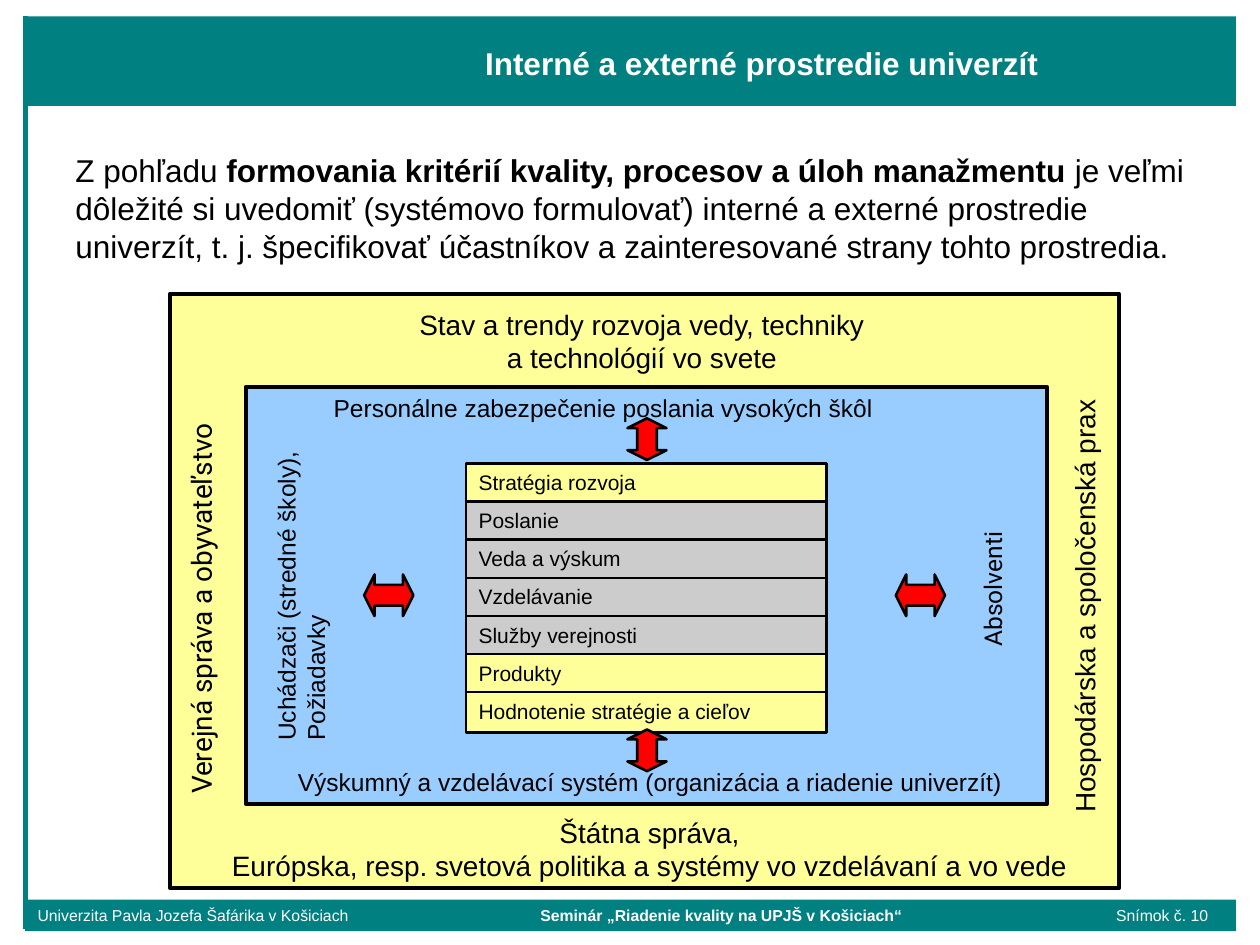
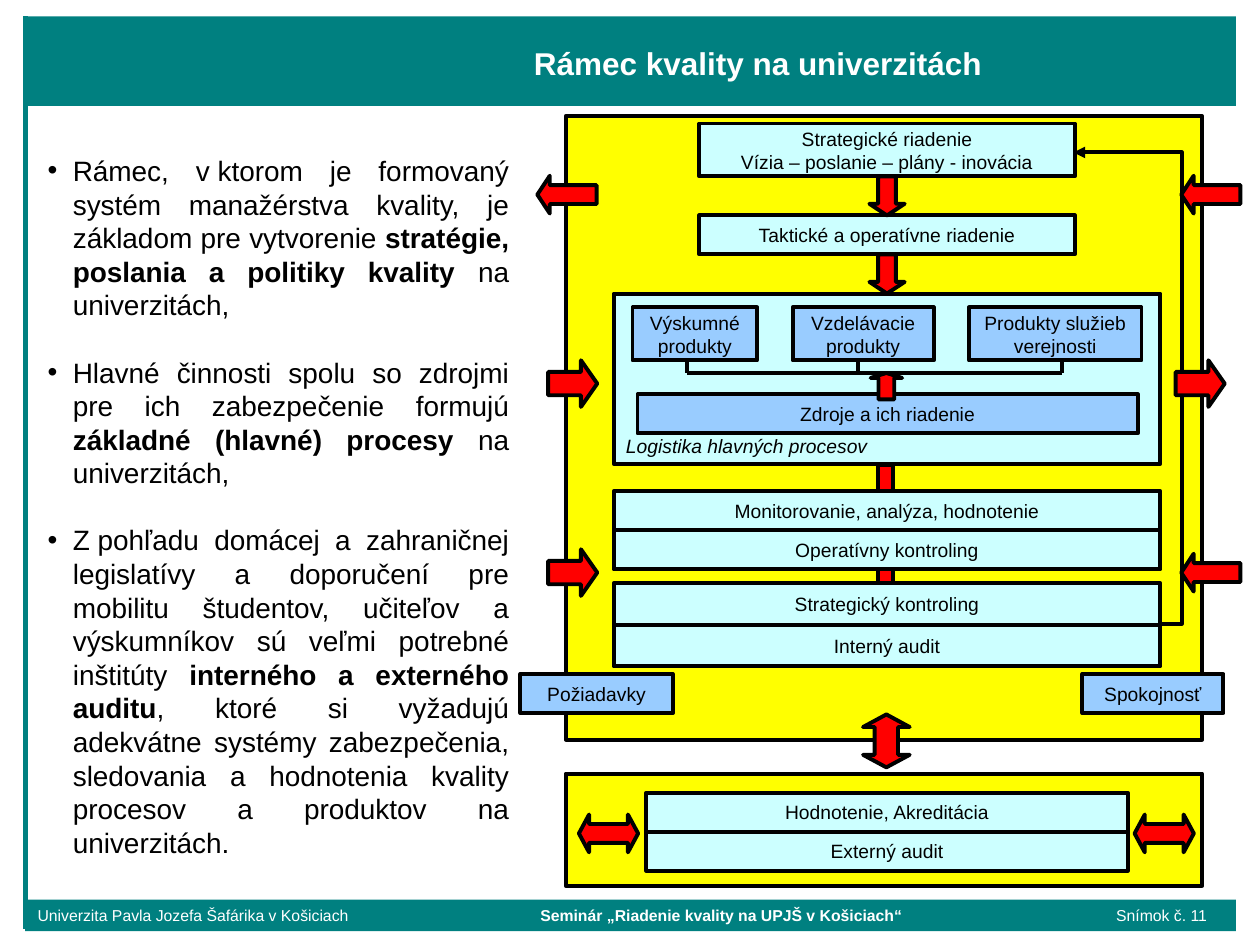
import pptx
import pptx.util
import pptx.dml.color
import pptx.enum.shapes
import pptx.enum.text
import pptx.oxml.ns
from lxml import etree

RGBColor = pptx.dml.color.RGBColor
SHAPE = pptx.enum.shapes.MSO_SHAPE
ALIGN = pptx.enum.text.PP_ALIGN
ANCHOR = pptx.enum.text.MSO_ANCHOR
Pt = pptx.util.Pt
qn = pptx.oxml.ns.qn

TEAL = RGBColor(0x00, 0x80, 0x80)
WHITE = RGBColor(0xFF, 0xFF, 0xFF)
BLACK = RGBColor(0x00, 0x00, 0x00)
RED = RGBColor(0xFF, 0x00, 0x00)
YELLOW = RGBColor(0xFF, 0xFF, 0x00)
CREAM = RGBColor(0xFF, 0xFF, 0x99)
GREY = RGBColor(0xCC, 0xCC, 0xCC)
BLUE = RGBColor(0x99, 0xCC, 0xFF)
ICE = RGBColor(0xCC, 0xFF, 0xFF)

deck = pptx.Presentation()
deck.slide_width = pptx.util.Inches(10)
deck.slide_height = pptx.util.Inches(7.5)
CELL = deck.slide_width // 100  # square grid: 100 columns, 75 rows


def block(slide, kind, at, text="", fill=None, line=0, size=11, align=ALIGN.CENTER,
          anchor=ANCHOR.MIDDLE, font="Arial", color=BLACK, turned=False):
    """Add a shape (or a text box if kind is None) at grid cells; *stars* mark bold."""
    place = [round(cells * CELL) for cells in at]
    if kind is None:
        shape = slide.shapes.add_textbox(*place)
    else:
        shape = slide.shapes.add_shape(kind, *place)
        shape.shadow.inherit = False
        if line:
            shape.line.color.rgb = BLACK
            shape.line.width = Pt(line)
        else:
            shape.line.fill.background()
    if fill is not None:
        shape.fill.solid()
        shape.fill.fore_color.rgb = fill
    if text:
        frame = shape.text_frame
        frame.word_wrap = True
        frame.vertical_anchor = anchor
        if turned:
            frame._txBody.bodyPr.set("vert", "vert270")
        for number, content in enumerate(text.split("\n")):
            paragraph = frame.add_paragraph() if number else frame.paragraphs[0]
            paragraph.alignment = align
            paragraph.font.size = Pt(size)
            paragraph.font.name = font
            paragraph.font.color.rgb = color
            for part, words in enumerate(content.split("*")):
                if words:
                    run = paragraph.add_run()
                    run.text = words
                    if part % 2:
                        run.font.bold = True
    return shape


def rule(slide, start, end, color=BLACK, width=2.25):
    ends = [round(cells * CELL) for cells in (*start, *end)]
    connector = slide.shapes.add_connector(pptx.enum.shapes.MSO_CONNECTOR.STRAIGHT, *ends)
    connector.line.color.rgb = color
    connector.line.width = Pt(width)
    etree.SubElement(connector.element.spPr, qn("a:effectLst"))


# Bands, footer and title on both slides
slides = []
for number, heading, left in (
    (10, "Interné a externé prostredie univerzít", 23.2),
    (11, "Rámec kvality na univerzitách", 22.9),
):
    slide = deck.slides.add_slide(deck.slide_layouts[5])
    rule(slide, (2, 1.3), (2, 73.7), TEAL, 3)
    footer = block(
        slide, SHAPE.RECTANGLE, (2, 71.4, 96.1, 2.5),
        "Univerzita Pavla Jozefa Šafárika v Košiciach"
        f"\t*Seminár „Riadenie kvality na UPJŠ v Košiciach“*\tSnímok č. {number}",
        TEAL, size=9, align=ALIGN.LEFT, color=WHITE)
    tabs = etree.Element(qn("a:tabLst"))
    for stop in (39.9, 85.6):
        etree.SubElement(tabs, qn("a:tab"), pos=str(round(stop * CELL)), algn="l")
    footer.text_frame.paragraphs[0]._p.get_or_add_pPr().insert(0, tabs)
    block(slide, SHAPE.RECTANGLE, (2, 1.3, 96.1, 7.1), fill=TEAL)

    title = slide.shapes.title
    title.element.getparent().append(title.element)
    title.left, title.top, title.width, title.height = [
        round(cells * CELL) for cells in (left, 3, 74.5, 6.4)]
    title.text_frame.text = heading
    title.text_frame.vertical_anchor = ANCHOR.TOP
    title_line = title.text_frame.paragraphs[0]
    title_line.alignment = ALIGN.CENTER
    title_line.font.size = Pt(18)
    title_line.font.name = "Arial"
    title_line.font.bold = True
    title_line.font.color.rgb = WHITE
    slides.append(slide)
environment, framework = slides

# Slide 10: internal and external environment
block(environment, None, (5, 11.5, 92.2, 12.6),
      "Z\u00a0pohľadu *formovania kritérií kvality, procesov a úloh manažmentu* je veľmi "
      "dôležité si uvedomiť (systémovo formulovať) interné a externé prostredie univerzít, "
      "t. j. špecifikovať účastníkov a zainteresované strany tohto prostredia.",
      size=18, align=ALIGN.LEFT, anchor=ANCHOR.TOP)

block(environment, SHAPE.RECTANGLE, (13.5, 23.3, 75.3, 47.2), fill=CREAM, line=2.25)
for at, text in (
    ((28.3, 23.9, 45.3, 6.4), "Stav a trendy rozvoja vedy, techniky\na technológií vo svete"),
    ((16.9, 64.2, 69.3, 6.7),
     "Štátna správa,\nEurópska, resp. svetová politika a systémy vo vzdelávaní a vo vede"),
):
    block(environment, None, at, text, size=16, anchor=ANCHOR.TOP)
block(environment, SHAPE.RECTANGLE, (14.1, 26.5, 4.6, 37.5), "Verejná správa a obyvateľstvo",
      CREAM, size=16, align=ALIGN.LEFT, anchor=ANCHOR.TOP, font="Roboto", turned=True)
block(environment, None, (83, 26.5, 6.1, 39), "Hospodárska a spoločenská prax",
      size=16, align=ALIGN.LEFT, turned=True)

block(environment, SHAPE.RECTANGLE, (19.5, 30.7, 63.6, 33.1), fill=BLUE, line=2.25)
block(environment, None, (20.1, 60.4, 63, 3.4),
      "Výskumný a vzdelávací systém (organizácia a riadenie univerzít)",
      size=14, anchor=ANCHOR.TOP)
block(environment, None, (25.5, 30.7, 51.6, 3.6),
      "Personálne zabezpečenie poslania vysokých škôl",
      size=14, align=ALIGN.LEFT, anchor=ANCHOR.TOP)

for row, (activity, fill) in enumerate((
    ("Stratégia rozvoja", CREAM), ("Poslanie", GREY), ("Veda a výskum", GREY),
    ("Vzdelávanie", GREY), ("Služby verejnosti", GREY), ("Produkty", CREAM),
    ("Hodnotenie stratégie a cieľov", CREAM),
)):
    block(environment, SHAPE.RECTANGLE, (37, 36.8 + 3.02 * row, 28.6, 3.2), activity, fill, 1.5,
          size=12, align=ALIGN.LEFT, anchor=ANCHOR.TOP)

applicants = block(environment, SHAPE.RECTANGLE, (21.1, 34, 5.5, 24.9),
                   "Uchádzači (stredné školy),\nPožiadavky",
                   BLUE, size=14, align=ALIGN.LEFT, turned=True).text_frame
applicants.margin_left = applicants.margin_right = pptx.util.Inches(0.06)
applicants.margin_top = applicants.margin_bottom = pptx.util.Inches(0.01)
block(environment, SHAPE.RECTANGLE, (76, 40.7, 5.5, 11.6), "Absolventi",
      BLUE, size=14, align=ALIGN.LEFT, font="Roboto", turned=True)

for at, angle in (
    ((71.1, 45.6, 3.9, 3.3), 0),
    ((28.9, 45.6, 3.9, 3.3), 0),
    ((49.7, 33.3, 3.3, 3.1), 270),
    ((49.7, 58, 3.3, 3.1), 270),
):
    exchange = block(environment, SHAPE.LEFT_RIGHT_ARROW, at, fill=RED, line=1.5)
    exchange.adjustments[1] = 0.25
    exchange.rotation = angle

# Slide 11: quality framework
for at in ((44.9, 61.4, 50.5, 8.9), (44.9, 9.2, 50.5, 49.5)):
    block(framework, SHAPE.RECTANGLE, at, fill=YELLOW, line=2.25)

logistics = block(framework, SHAPE.RECTANGLE, (48.7, 23.3, 43.4, 13.5),
                  "Logistika hlavných procesov", ICE, 2.25,
                  align=ALIGN.LEFT, anchor=ANCHOR.BOTTOM)
logistics.text_frame.paragraphs[0].font.italic = True

for top in (36.9, 45.2):
    block(framework, SHAPE.FLOWCHART_PROCESS, (69.7, top, 1.2, 2.1), fill=RED, line=2.25)

for at, text, fill in (
    ((55.5, 9.8, 29.8, 4.2), "Strategické riadenie\nVízia – poslanie – plány - inovácia", ICE),
    ((55.5, 17.1, 29.8, 3.1), "Taktické a operatívne riadenie", ICE),
    ((50.6, 31.3, 39.7, 3.1), "Zdroje a ich riadenie", BLUE),
    ((48.7, 39, 43.4, 3.1), "Monitorovanie, analýza, hodnotenie", ICE),
    ((48.7, 42.1, 43.4, 3.1), "Operatívny kontroling", ICE),
    ((48.7, 46.3, 43.4, 3.3), "Strategický kontroling", ICE),
    ((48.7, 49.6, 43.4, 3.3), "Interný audit", ICE),
    ((41.3, 53.5, 12.1, 3.1), "Požiadavky", BLUE),
    ((85.9, 53.5, 11.2, 3.1), "Spokojnosť", BLUE),
    ((51.3, 62.9, 38.2, 3.1), "Hodnotenie, Akreditácia", ICE),
    ((51.3, 66, 38.2, 3.1), "Externý audit", ICE),
):
    block(framework, SHAPE.RECTANGLE, at, text, fill, 2.25)

for left, width, product, stem in (
    (50.2, 9.9, "Výskumné produkty", 54.5),
    (62.9, 11.2, "Vzdelávacie produkty", 68.1),
    (76.9, 13.7, "Produkty služieb verejnosti", 84.3),
):
    block(framework, SHAPE.RECTANGLE, (left, 24.4, width, 4.2), product, BLUE, 2.25)
    rule(framework, (stem, 28.6), (stem, 29.6))
rule(framework, (54.5, 29.6), (84.3, 29.6))

feedback_points = [(round(x * CELL), round(y * CELL))
                   for x, y in ((92, 49.5), (93.8, 49.5), (93.8, 12.1), (85.2, 12.1))]
builder = framework.shapes.build_freeform(*feedback_points[0])
builder.add_line_segments(feedback_points[1:], close=False)
feedback = builder.convert_to_shape()
feedback.shadow.inherit = False
feedback.fill.background()
feedback.line.color.rgb = BLACK
feedback.line.width = Pt(2.25)
etree.SubElement(feedback.element.spPr.find(qn("a:ln")), qn("a:tailEnd"), type="triangle")

for kind, head, angle, places in (
    (SHAPE.DOWN_ARROW, 0.33, 0, ((69, 14, 2.8, 3.1), (69, 20.2, 2.8, 3.1))),
    (SHAPE.UP_ARROW, 0.19, 0, ((69.1, 29.6, 2.5, 2.1),)),
    (SHAPE.LEFT_RIGHT_ARROW, 0.27, 270, ((68.25, 56.95, 4.2, 3.7),)),
    (SHAPE.RIGHT_ARROW, 0.35, 0,
     ((93.3, 28.6, 3.9, 3.7), (43.5, 28.6, 3.9, 3.7), (43.5, 43.6, 3.9, 3.7))),
    (SHAPE.LEFT_ARROW, 0.33, 0,
     ((93.75, 43.95, 4.7, 3), (93.75, 13.95, 4.7, 3), (42.65, 13.95, 4.7, 3))),
    (SHAPE.LEFT_RIGHT_ARROW, 0.27, 0, ((90.05, 64.65, 4.7, 3), (45.95, 64.65, 4.7, 3))),
):
    for at in places:
        flow = block(framework, kind, at, fill=RED, line=2.25)
        flow.adjustments[1] = head
        flow.rotation = angle

theses = block(
    framework, None, (2.8, 11.7, 38.6, 57.6),
    "Rámec, v\u00a0ktorom je formovaný systém manažérstva kvality, je základom pre vytvorenie "
    "*stratégie, poslania a politiky kvality* na univerzitách,\n"
    "Hlavné činnosti spolu so zdrojmi pre ich zabezpečenie formujú "
    "*základné (hlavné) procesy* na univerzitách,\n"
    "Z\u00a0pohľadu domácej a zahraničnej legislatívy a doporučení pre mobilitu študentov, "
    "učiteľov a výskumníkov sú veľmi potrebné inštitúty *interného a externého auditu*, "
    "ktoré si vyžadujú adekvátne systémy zabezpečenia, sledovania a hodnotenia kvality "
    "procesov a produktov na univerzitách.",
    size=16, align=ALIGN.JUSTIFY, anchor=ANCHOR.TOP)
for number, thesis in enumerate(theses.text_frame.paragraphs):
    properties = thesis._p.get_or_add_pPr()
    properties.set("marL", str(2 * CELL))
    properties.set("indent", str(-2 * CELL))
    properties.insert(0, etree.Element(qn("a:buFont"), typeface="Arial"))
    properties.insert(1, etree.Element(qn("a:buChar"), char="•"))
    if number:
        thesis.space_before = Pt(19.2)

deck.save("out.pptx")
